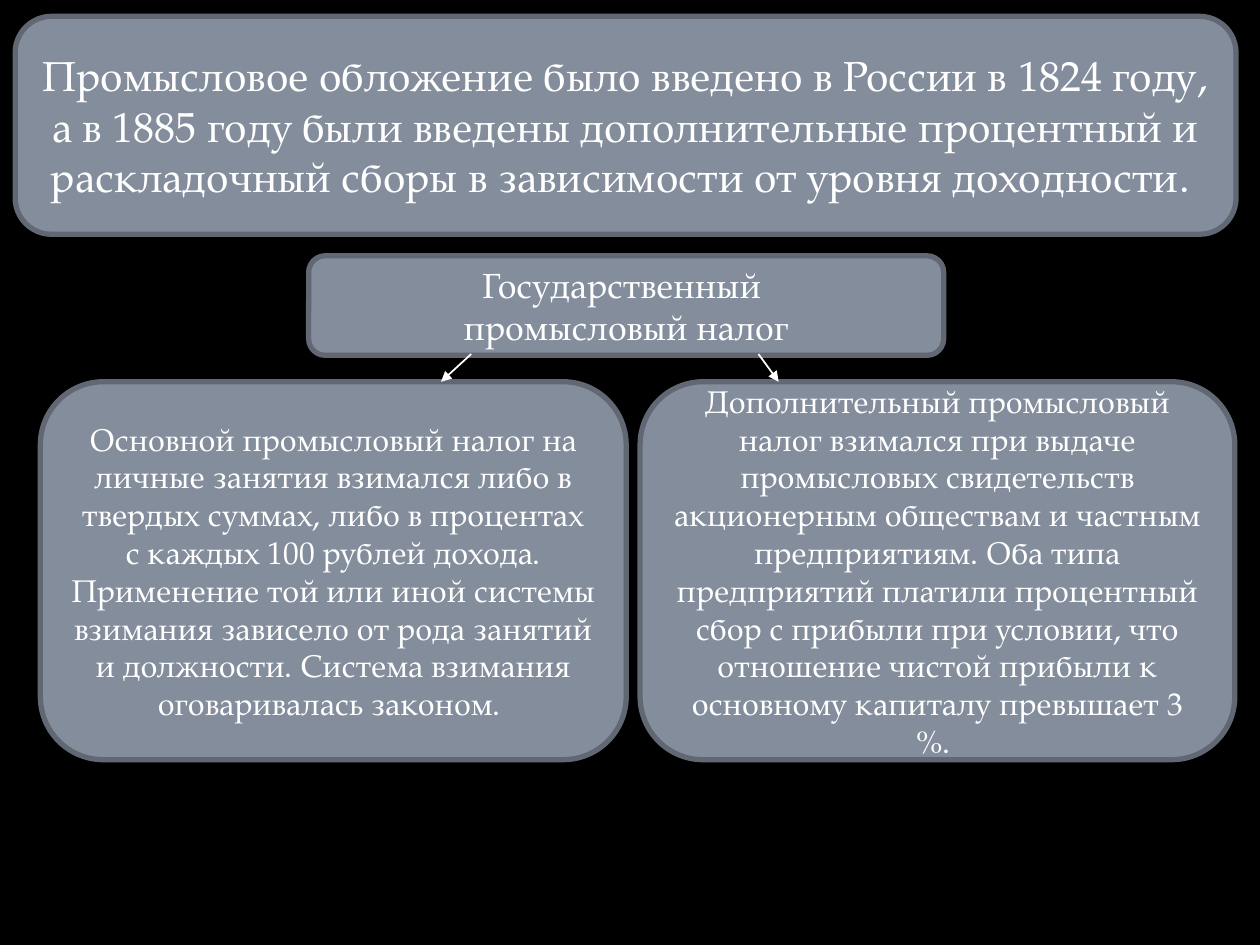
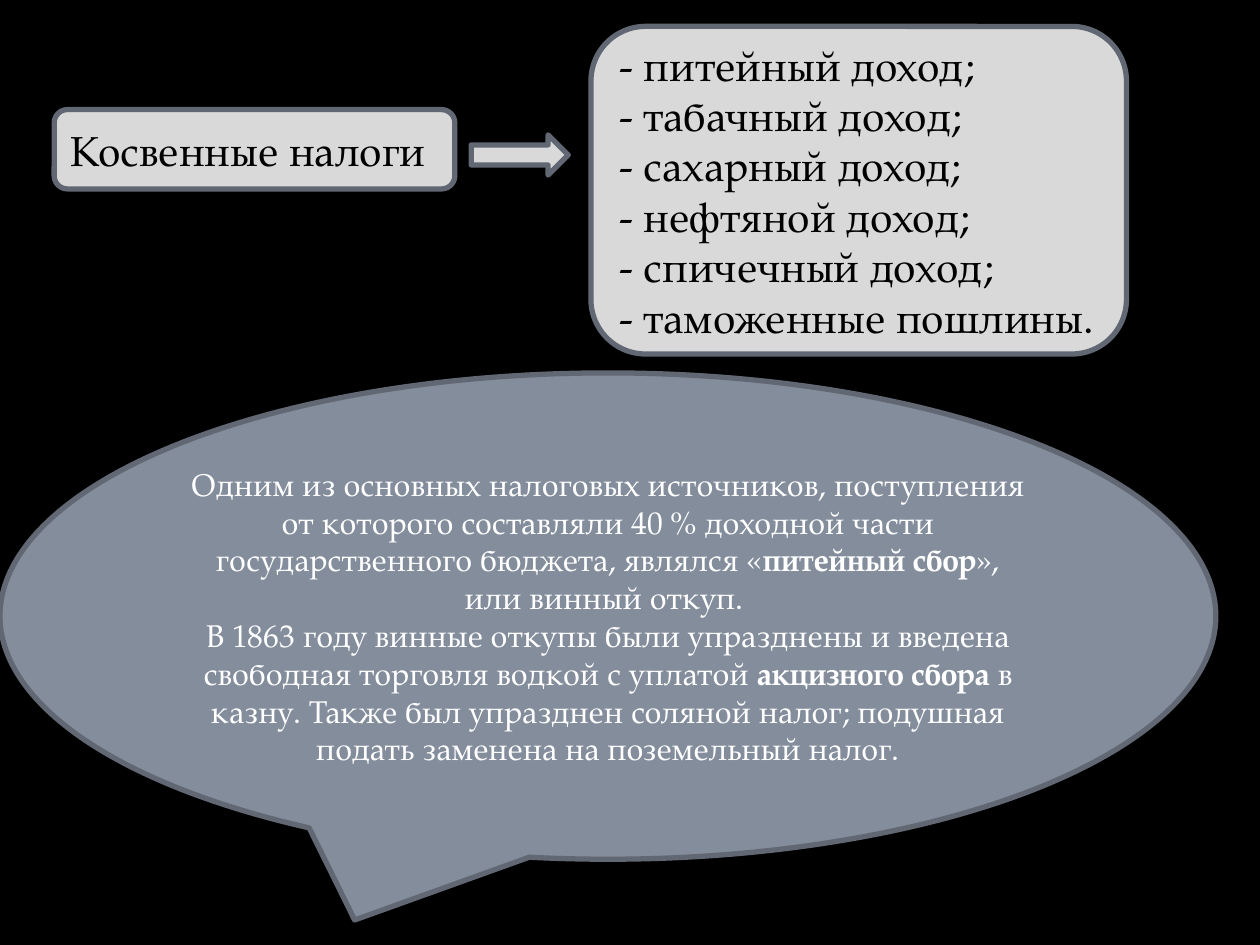
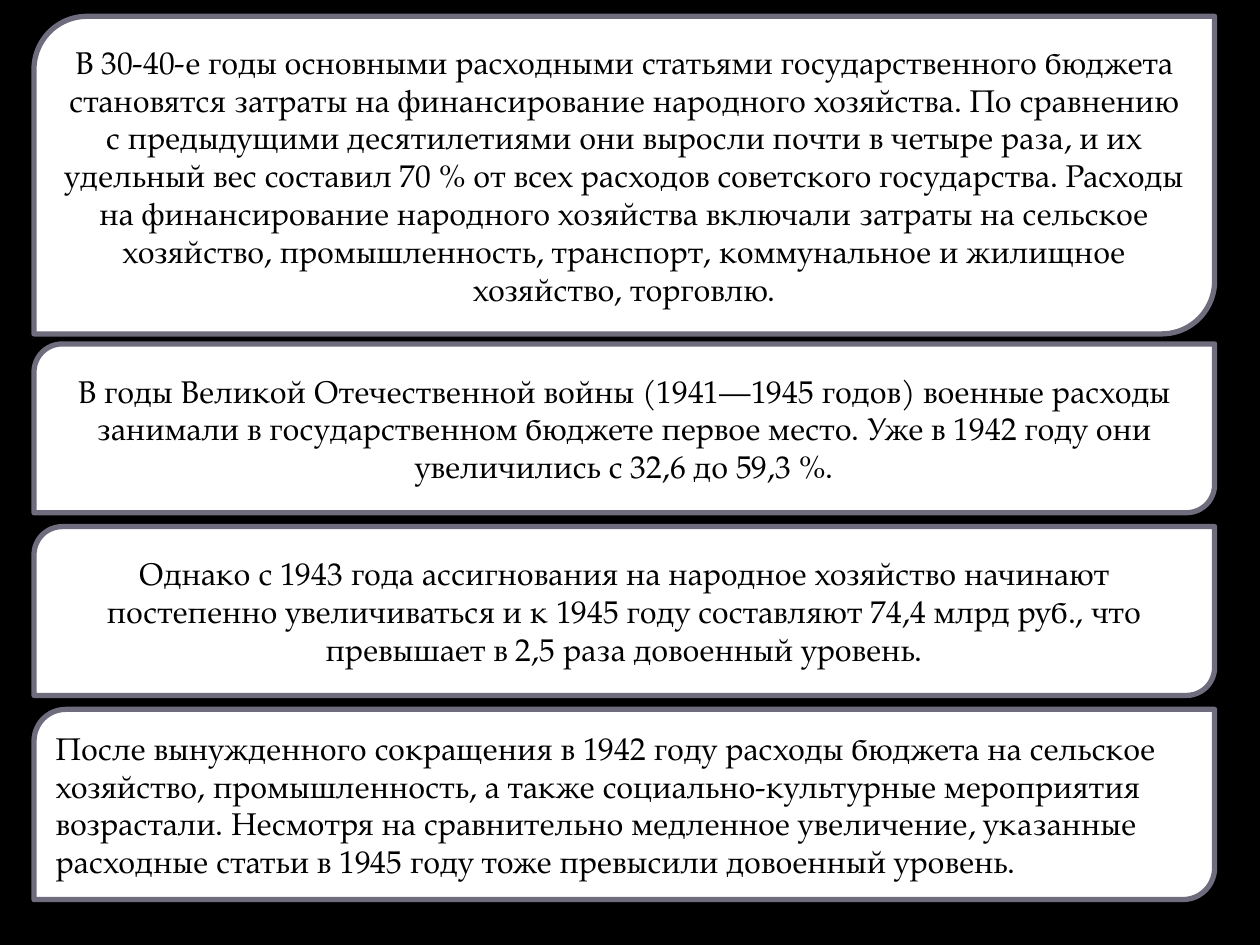
from dataclasses import dataclass

from lxml import etree
from pptx import Presentation
from pptx.dml.color import RGBColor
from pptx.enum.shapes import MSO_CONNECTOR, MSO_SHAPE
from pptx.enum.text import MSO_ANCHOR, PP_ALIGN
from pptx.oxml.ns import qn
from pptx.util import Inches, Pt

ROUNDED = MSO_SHAPE.ROUNDED_RECTANGLE
DIAGONAL = MSO_SHAPE.ROUND_2_DIAG_RECTANGLE
CALLOUT = MSO_SHAPE.OVAL_CALLOUT
RIGHT_ARROW = MSO_SHAPE.RIGHT_ARROW
STRAIGHT = MSO_CONNECTOR.STRAIGHT
LEFT = PP_ALIGN.LEFT
CENTER = PP_ALIGN.CENTER
MIDDLE = MSO_ANCHOR.MIDDLE


@dataclass(frozen=True)
class BoxStyle:
    fill: RGBColor
    line: RGBColor
    text: RGBColor


@dataclass(frozen=True)
class Theme:
    black = RGBColor(0x00, 0x00, 0x00)
    white = RGBColor(0xFF, 0xFF, 0xFF)
    slate_line = RGBColor(0x61, 0x68, 0x73)
    slate = BoxStyle(RGBColor(0x83, 0x8D, 0x9B), slate_line, white)
    light = BoxStyle(RGBColor(0xD9, 0xD9, 0xD9), slate_line, black)
    paper = BoxStyle(white, RGBColor(0x6F, 0x6C, 0x7D), black)
    font = "TeX Gyre Pagella"
    large = Pt(24)
    medium = Pt(20)
    body = Pt(18)
    outline = Pt(3)
    pointer = Pt(1)


def write_text(frame, paragraphs, *, font, size, color, align):
    frame.word_wrap = True
    frame.vertical_anchor = MIDDLE
    for index, content in enumerate(paragraphs):
        paragraph = frame.add_paragraph() if index else frame.paragraphs[0]
        paragraph.alignment = align
        for position, part in enumerate(content.split("**")):
            run = paragraph.add_run()
            run.text = part
            run.font.name = font
            run.font.size = size
            run.font.bold = position % 2 == 1
            run.font.color.rgb = color


class Deck:
    def __init__(self, theme):
        self.theme = theme
        self.presentation = Presentation()
        self.presentation.slide_width = Inches(10)
        self.presentation.slide_height = Inches(7.5)
        self.slide = None

    def add_slide(self):
        blank = self.presentation.slide_layouts[6]
        self.slide = self.presentation.slides.add_slide(blank)
        fill = self.slide.background.fill
        fill.solid()
        fill.fore_color.rgb = self.theme.black

    def box(self, kind, left, top, width, height, style, paragraphs=(),
            size=Theme.body, align=CENTER):
        shape = self.slide.shapes.add_shape(
            kind, Inches(left), Inches(top), Inches(width), Inches(height))
        shape.shadow.inherit = False
        shape.fill.solid()
        shape.fill.fore_color.rgb = style.fill
        shape.line.color.rgb = style.line
        shape.line.width = self.theme.outline
        write_text(shape.text_frame, paragraphs, font=self.theme.font,
                   size=size, color=style.text, align=align)

    def pointer(self, start_x, start_y, end_x, end_y):
        connector = self.slide.shapes.add_connector(
            STRAIGHT, Inches(start_x), Inches(start_y), Inches(end_x), Inches(end_y))
        connector.line.color.rgb = self.theme.white
        connector.line.width = self.theme.pointer
        etree.SubElement(connector.line._get_or_add_ln(), qn("a:tailEnd"), type="triangle")
        etree.SubElement(connector._element.spPr, qn("a:effectLst"))


def build_trade_tax(deck):
    theme = deck.theme
    deck.add_slide()
    deck.box(ROUNDED, 0.12, 0.13, 9.69, 1.73, theme.slate, [
        "Промысловое обложение было введено в России в 1824 году, а в 1885 году "
        "были введены дополнительные процентный и раскладочный сборы в зависимости "
        "от уровня доходности. "], size=theme.large)
    deck.box(ROUNDED, 2.45, 2.03, 5.04, 0.79, theme.slate,
             ["Государственный ", "промысловый налог"], size=theme.medium)
    branches = [
        (0.32, 4.65,
         "Основной промысловый налог на личные занятия взимался либо в твердых "
         "суммах, либо в процентах с каждых 100 рублей дохода. Применение той или "
         "иной системы взимания зависело от рода занятий и должности. Система "
         "взимания оговаривалась законом. "),
        (5.08, 4.72,
         "Дополнительный промысловый налог взимался при выдаче промысловых "
         "свидетельств акционерным обществам и частным предприятиям. Оба типа "
         "предприятий платили процентный сбор с прибыли при условии, что отношение "
         "чистой прибыли к основному капиталу превышает 3 %. "),
    ]
    for left, width, text in branches:
        deck.box(ROUNDED, left, 3.03, width, 3, theme.slate, [text])
    for start_x, end_x in ((3.74, 3.5), (6.02, 6.18)):
        deck.pointer(start_x, 2.81, end_x, 3.03)


def build_indirect_taxes(deck):
    theme = deck.theme
    deck.add_slide()
    deck.box(ROUNDED, 0.43, 0.87, 3.18, 0.63, theme.light,
             ["Косвенные налоги"], size=theme.large, align=LEFT)
    deck.box(ROUNDED, 4.69, 0.21, 4.25, 2.6, theme.light, [
        "- питейный доход;",
        "- табачный доход;",
        "- сахарный доход;",
        "- нефтяной доход;",
        "- спичечный доход;",
        "- таможенные пошлины.",
    ], size=theme.large, align=LEFT)
    deck.box(CALLOUT, 0, 2.96, 9.65, 3.86, theme.slate, [
        "Одним из основных налоговых источников, поступления от которого составляли "
        "40 % доходной части государственного бюджета, являлся «**питейный сбор**», "
        "или винный откуп. ",
        "В 1863 году винные откупы были упразднены и введена свободная торговля "
        "водкой с уплатой **акцизного сбора **в казну. Также был упразднен соляной "
        "налог; подушная подать заменена на поземельный налог.",
    ])
    deck.box(RIGHT_ARROW, 3.74, 1.07, 0.77, 0.32, theme.light)


def build_budget_spending(deck):
    deck.add_slide()
    periods = [
        (0.13, 2.52, CENTER,
         "В 30-40-е годы основными расходными статьями государственного бюджета "
         "становятся затраты на финансирование народного хозяйства. По сравнению с "
         "предыдущими десятилетиями они выросли почти в четыре раза, и их удельный "
         "вес составил 70 % от всех расходов советского государства. Расходы на "
         "финансирование народного хозяйства включали затраты на сельское хозяйство, "
         "промышленность, транспорт, коммунальное и жилищное хозяйство, торговлю."),
        (2.73, 1.34, CENTER,
         "В годы Великой Отечественной войны (1941—1945 годов) военные расходы "
         "занимали в государственном бюджете первое место. Уже в 1942 году они "
         "увеличились с 32,6 до 59,3 %."),
        (4.18, 1.34, CENTER,
         "Однако с 1943 года ассигнования на народное хозяйство начинают постепенно "
         "увеличиваться и к 1945 году составляют 74,4 млрд руб., что превышает в 2,5 "
         "раза довоенный уровень."),
        (5.63, 1.51, LEFT,
         "После вынужденного сокращения в 1942 году расходы бюджета на сельское "
         "хозяйство, промышленность, а также социально-культурные мероприятия "
         "возрастали. Несмотря на сравнительно медленное увеличение, указанные "
         "расходные статьи в 1945 году тоже превысили довоенный уровень."),
    ]
    for top, height, align, text in periods:
        deck.box(DIAGONAL, 0.27, top, 9.37, height, deck.theme.paper, [text], align=align)


def main():
    deck = Deck(Theme())
    build_trade_tax(deck)
    build_indirect_taxes(deck)
    build_budget_spending(deck)
    deck.presentation.save("out.pptx")


if __name__ == "__main__":
    main()
